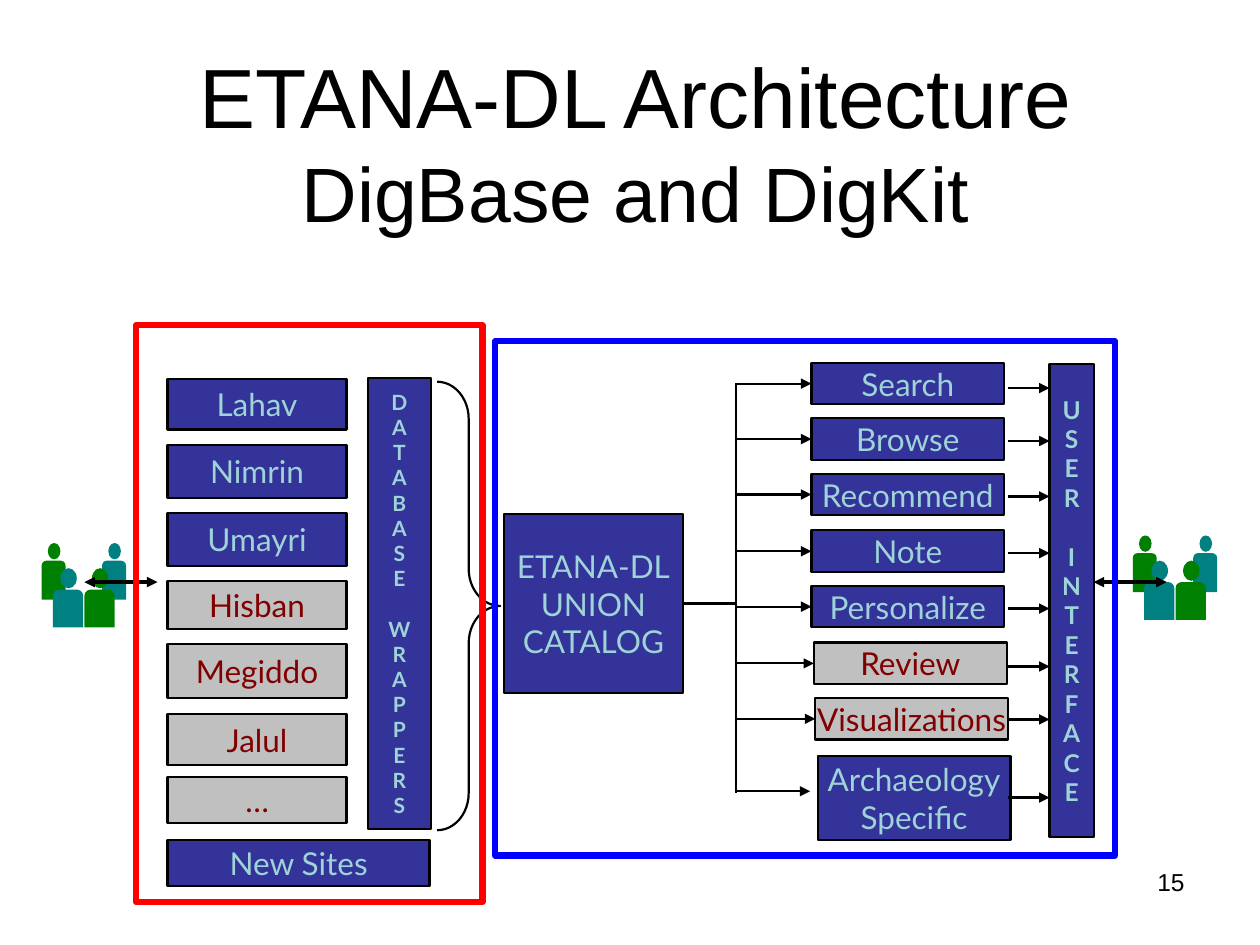
from lxml import etree
from pptx import Presentation
from pptx.dml.color import RGBColor
from pptx.enum import shapes, text
from pptx.oxml.ns import qn
from pptx.util import Inches, Pt

COLORS = {
    "black": "000000", "navy": "333399", "ice": "9ED3D7", "grey": "C0C0C0",
    "maroon": "800000", "red": "FF0000", "blue": "0000FF",
    "green": "008000", "teal": "008080",
}
SHAPE = shapes.MSO_SHAPE
LEFT, RIGHT = 1, 3  # connection sites of a rectangle


def color(name):
    return RGBColor.from_string(COLORS[name])


class Diagram:
    """Holds the style and the slide being drawn."""

    font = "Lato"
    title_font = "Arial"
    size = 18
    line_width = 1.25

    def __init__(self, slide):
        self.slide = slide

    def run(self, p, words, size, font, ink, bold=False):
        r = p.add_run()
        r.text = words
        r.font.size, r.font.name, r.font.bold = Pt(size), font, bold
        r.font.color.rgb = color(ink)

    def title(self, lines, box):
        sp = self.slide.shapes.title
        sp.left, sp.top, sp.width, sp.height = map(Inches, box)
        tf = sp.text_frame
        tf.auto_size = text.MSO_AUTO_SIZE.NONE
        tf.vertical_anchor = text.MSO_ANCHOR.MIDDLE
        p = tf.paragraphs[0]
        p.alignment = text.PP_ALIGN.CENTER
        for i, (words, size) in enumerate(lines):
            if i:
                p.add_line_break()
            self.run(p, words, size, self.title_font, "black")

    def page_number(self, words, box):
        tf = self.slide.shapes.add_textbox(*map(Inches, box)).text_frame
        tf.word_wrap = True
        p = tf.paragraphs[0]
        p.alignment = text.PP_ALIGN.RIGHT
        self.run(p, words, 14, self.title_font, "black")

    def shape(self, kind, box, fill=None, line=None, width=line_width, parent=None):
        sp = (parent or self.slide).shapes.add_shape(kind, *map(Inches, box))
        sp.shadow.inherit = False
        if fill:
            sp.fill.solid()
            sp.fill.fore_color.rgb = color(fill)
        else:
            sp.fill.background()
        if line:
            sp.line.color.rgb = color(line)
            sp.line.width = Pt(width)
        else:
            sp.line.fill.background()
        return sp

    def block(self, lines, box, planned=False, size=size, bold=False, gaps=()):
        """Labelled box; planned parts are grey, gaps are lines with space above."""
        fill, ink = ("grey", "maroon") if planned else ("navy", "ice")
        sp = self.shape(SHAPE.RECTANGLE, box, fill, "black")
        tf = sp.text_frame
        tf.word_wrap = False
        tf.vertical_anchor = text.MSO_ANCHOR.MIDDLE
        for i, words in enumerate(lines):
            p = tf.add_paragraph() if i else tf.paragraphs[0]
            p.alignment = text.PP_ALIGN.CENTER
            if i in gaps:
                p.space_before = Pt(size * 1.2)
            self.run(p, words, size, self.font, ink, bold)
        return sp

    def column(self, first, second, box, size):
        """Two words written downwards, one letter to a line."""
        return self.block(first + second, box, size=size, bold=True, gaps=[len(first)])

    def line(self, start, end, width=line_width, heads=()):
        cx = self.slide.shapes.add_connector(
            shapes.MSO_CONNECTOR.STRAIGHT, *map(Inches, start + end))
        cx.line.color.rgb = color("black")
        cx.line.width = Pt(width)
        ln = cx.line._get_or_add_ln()
        for head in heads:
            etree.SubElement(ln, qn(f"a:{head}"), type="triangle")
        etree.SubElement(cx._element.spPr, qn("a:effectLst"))
        return cx

    def people(self, left, top):
        group = self.slide.shapes.add_group_shape()
        # head offset, head size, body offset, body size
        back = (0.05, 0, 0.1, 0.13), (0, 0.14, 0.19, 0.31)
        front = (0.06, 0.2, 0.13, 0.16), (0, 0.37, 0.24, 0.3)
        for dx, ink, figure in ((0, "green", back), (0.48, "teal", back),
                                (0.34, "green", front), (0.09, "teal", front)):
            for kind, (x, y, w, h) in zip(
                    (SHAPE.OVAL, SHAPE.ROUND_2_SAME_RECTANGLE), figure):
                sp = self.shape(kind, (left + dx + x, top + y, w, h), ink, parent=group)
                if kind == SHAPE.ROUND_2_SAME_RECTANGLE:
                    sp.adjustments[0] = 0.2


def main():
    prs = Presentation()
    prs.slide_width, prs.slide_height = Inches(10), Inches(7.5)
    d = Diagram(prs.slides.add_slide(prs.slide_layouts[5]))

    # Title and page number
    d.title([("ETANA-DL Architecture", 48), ("DigBase and DigKit", 44)],
            (1.12, 0.7, 7.85, 0.84))
    d.page_number("15", (7.17, 6.83, 2.33, 0.52))

    # Sites and their wrappers
    sites = [("Lahav", 3.01, 0.4, False), ("Nimrin", 3.53, 0.42, False),
             ("Umayri", 4.07, 0.42, False), ("Hisban", 4.61, 0.38, True),
             ("Megiddo", 5.11, 0.43, True), ("Jalul", 5.67, 0.4, True),
             ("…", 6.17, 0.36, True)]
    for name, top, height, planned in sites:
        d.block([name], (1.33, top, 1.42, height), planned)
    d.block(["New Sites"], (1.33, 6.67, 2.08, 0.36))
    d.column("DATABASE", "WRAPPERS", (2.92, 3, 0.5, 3.58), 12)
    brace = d.shape(SHAPE.RIGHT_BRACE, (3.47, 3.03, 0.5, 3.56), line="black")
    brace.adjustments[0] = 0.59

    # Union catalog and the trunk to the services
    trunk = 5.84
    catalog = d.block(["ETANA-DL", "UNION", "CATALOG"], (4, 4.08, 1.42, 1.42))
    d.line((5.42, 4.79), (trunk, 4.79)).begin_connect(catalog, RIGHT)
    d.line((trunk, 3.04), (trunk, 6.29))

    # Services: lines, left, top, height, planned, y of the outgoing arrow
    d.column("USER", "INTERFACE", (8.33, 2.89, 0.35, 3.75), 14)
    services = [(["Search"], 6.44, 2.88, 0.33, False, 3.08),
                (["Browse"], 6.44, 3.32, 0.33, False, 3.5),
                (["Recommend"], 6.44, 3.76, 0.33, False, 3.94),
                (["Note"], 6.44, 4.21, 0.33, False, 4.39),
                (["Personalize"], 6.44, 4.65, 0.33, False, 4.83),
                (["Review"], 6.46, 5.1, 0.33, True, 5.29),
                (["Visualizations"], 6.47, 5.54, 0.33, True, 5.71),
                (["Archaeology", "Specific"], 6.49, 6, 0.67, False, 6.33)]
    for lines, left, top, height, planned, out_y in services:
        service = d.block(lines, (left, top, 1.53, height), planned)
        if len(lines) == 1:
            middle = top + height / 2
            feed = d.line((trunk, middle), (left, middle), heads=["tailEnd"])
            feed.end_connect(service, LEFT)
        else:
            d.line((trunk, 6.28), (6.43, 6.28), heads=["tailEnd"])
        d.line((8, out_y), (8.33, out_y), heads=["tailEnd"])

    # Users on both sides
    for left, top, arrow in ((8.99, 4.25, 8.68), (0.33, 4.31, 0.67)):
        d.people(left, top)
        d.line((arrow, 4.62), (arrow + 0.58, 4.62), 2, ["headEnd", "tailEnd"])

    # Frames of the two halves
    d.shape(SHAPE.RECTANGLE, (3.93, 2.71, 4.92, 4.08), line="blue", width=3.5)
    d.shape(SHAPE.RECTANGLE, (1.08, 2.58, 2.75, 4.58), line="red", width=3.5)

    prs.save("out.pptx")


if __name__ == "__main__":
    main()
